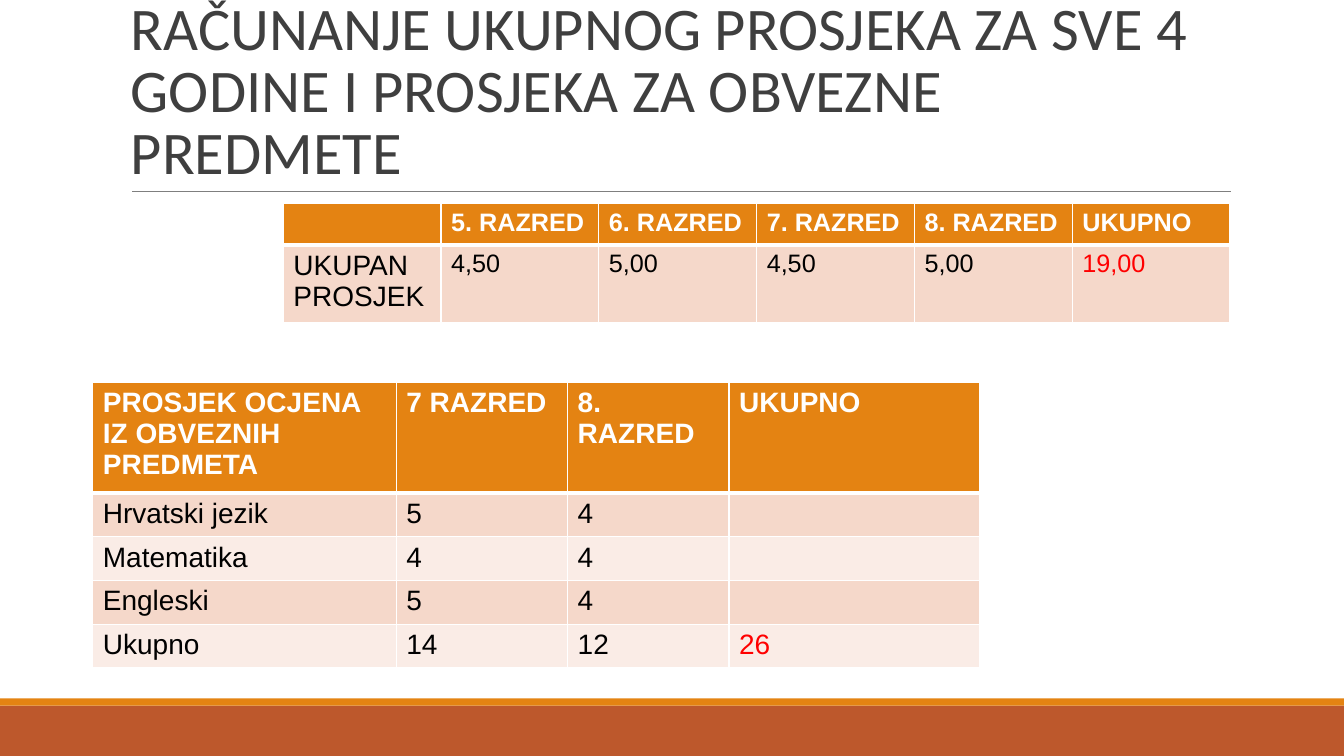
from lxml import etree
from pptx import Presentation
from pptx import util as u
from pptx.dml.color import RGBColor
from pptx.enum import shapes, text
from pptx.oxml.ns import qn

ORANGE, RUST, WHITE = "E48312", "BD582C", "FFFFFF"
BANDS = ["F5D8CA", "FAECE6"]
BLACK, RED = "000000", "FF0000"


def color(value):
    return RGBColor.from_string(value)


def style_text(paragraph, font_name, size, hex_color, bold=False):
    for run in paragraph.runs:
        run.font.name = font_name
        run.font.size = u.Pt(size)
        run.font.bold = bold
        run.font.color.rgb = color(hex_color)


def add_bar(slide, top, height, fill):
    bar = slide.shapes.add_shape(shapes.MSO_SHAPE.RECTANGLE, u.Inches(0),
                                 u.Inches(top), u.Inches(13.33), u.Inches(height))
    bar.shadow.inherit = False
    bar.fill.solid()
    bar.fill.fore_color.rgb = color(fill)
    bar.line.fill.background()


def add_rule(slide, left, right, y):
    rule = slide.shapes.add_connector(shapes.MSO_CONNECTOR.STRAIGHT, u.Inches(left),
                                      u.Inches(y), u.Inches(right), u.Inches(y))
    rule.line.color.rgb = color("7F7F7F")
    rule.line.width = u.Pt(0.75)
    etree.SubElement(rule._element.spPr, qn("a:effectLst"))


def add_title(slide, wording):
    box = slide.shapes.add_textbox(u.Inches(1.2), u.Inches(0.31),
                                   u.Inches(11), u.Inches(1.59))
    frame = box.text_frame
    frame.word_wrap = True
    frame.vertical_anchor = text.MSO_ANCHOR.BOTTOM
    frame.text = wording
    paragraph = frame.paragraphs[0]
    paragraph.line_spacing = 0.85
    style_text(paragraph, "Calibri", 43.2, "3F3F3F")


def set_borders(cell, bottom_width):
    properties = cell._tc.get_or_add_tcPr()
    for side, width in (("L", 1), ("R", 1), ("T", 1), ("B", bottom_width)):
        line = etree.SubElement(properties, qn(f"a:ln{side}"), w=str(u.Pt(width)))
        fill = etree.SubElement(line, qn("a:solidFill"))
        etree.SubElement(fill, qn("a:srgbClr"), val=WHITE)


def add_grade_table(slide, left, top, widths, heights, rows, size_at):
    """The last cell holds the grand total, shown in red."""
    table = slide.shapes.add_table(
        len(rows), len(widths), u.Inches(left), u.Inches(top),
        u.Inches(sum(widths)), u.Inches(sum(heights))).table
    for column, width in zip(table.columns, widths):
        column.width = u.Inches(width)
    for row, height in zip(table.rows, heights):
        row.height = u.Inches(height)
    last = (len(rows) - 1, len(widths) - 1)
    for r, values in enumerate(rows):
        header = r == 0
        for c, value in enumerate(values):
            cell = table.cell(r, c)
            set_borders(cell, 3 if header else 1)
            cell.fill.solid()
            cell.fill.fore_color.rgb = color(ORANGE if header else BANDS[(r - 1) % 2])
            cell.text_frame.text = value
            ink = WHITE if header else RED if (r, c) == last else BLACK
            style_text(cell.text_frame.paragraphs[0], "Arial", size_at(r, c), ink, header)


def main():
    presentation = Presentation()
    presentation.slide_width = u.Inches(13.33)
    presentation.slide_height = u.Inches(7.5)
    slide = presentation.slides.add_slide(presentation.slide_layouts[6])

    # Footer bars and title
    add_bar(slide, 7, 0.5, RUST)
    add_bar(slide, 6.93, 0.07, ORANGE)
    add_rule(slide, 1.31, 12.21, 1.9)
    add_title(slide, "RAČUNANJE UKUPNOG PROSJEKA ZA SVE 4 GODINE "
                     "I PROSJEKA ZA OBVEZNE PREDMETE")

    # Overall average for all four years
    add_grade_table(
        slide, 2.81, 2.02, [1.565] * 6, [0.41, 0.71],
        [["", "5. RAZRED", "6. RAZRED", "7. RAZRED", "8. RAZRED", "UKUPNO"],
         ["UKUPAN PROSJEK", "4,50", "5,00", "4,50", "5,00", "19,00"]],
        lambda r, c: 20 if (r, c) == (1, 0) else 18)

    # Grades in the compulsory subjects
    add_grade_table(
        slide, 0.92, 3.79, [3.01, 1.7, 1.6, 2.49], [1.03] + [0.41] * 4,
        [["PROSJEK OCJENA IZ OBVEZNIH PREDMETA", "7 RAZRED", "8. RAZRED", "UKUPNO"],
         ["Hrvatski jezik", "5", "4", ""],
         ["Matematika", "4", "4", ""],
         ["Engleski", "5", "4", ""],
         ["Ukupno", "14", "12", "26"]],
        lambda r, c: 20)

    presentation.save("out.pptx")


if __name__ == "__main__":
    main()
